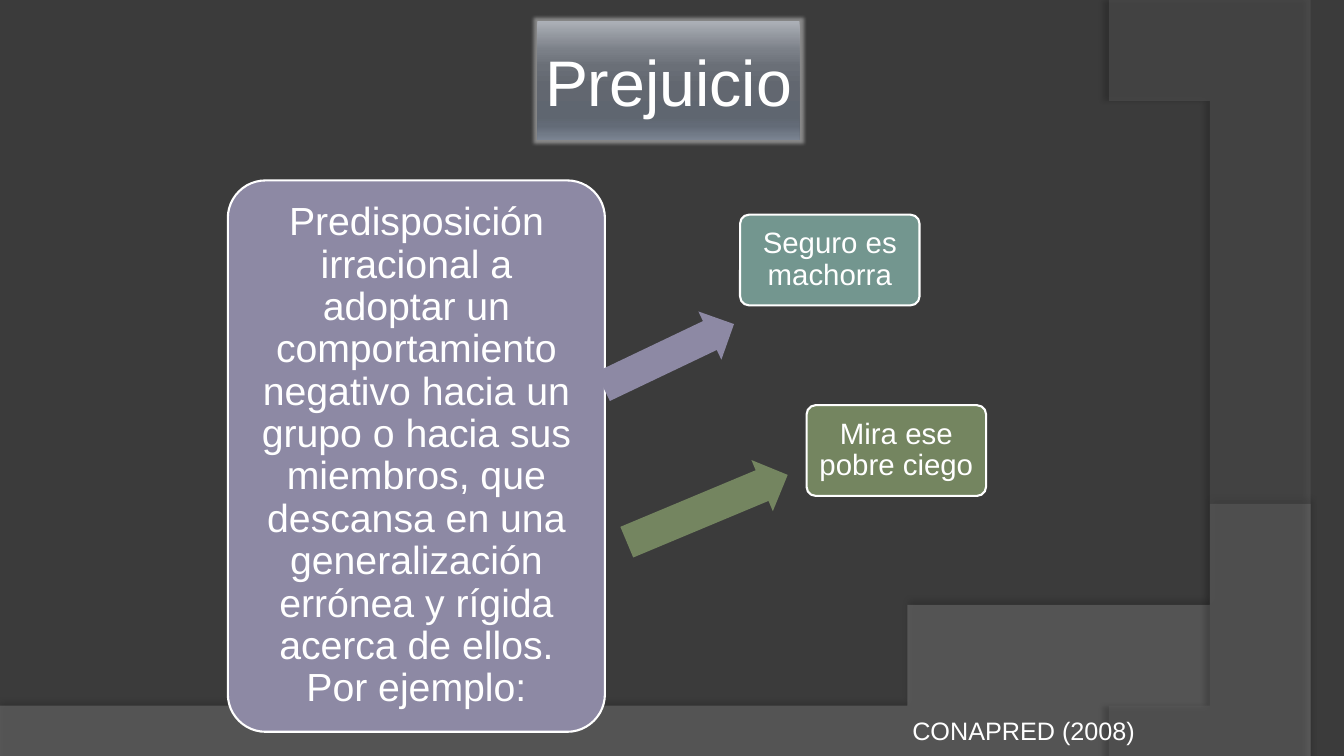
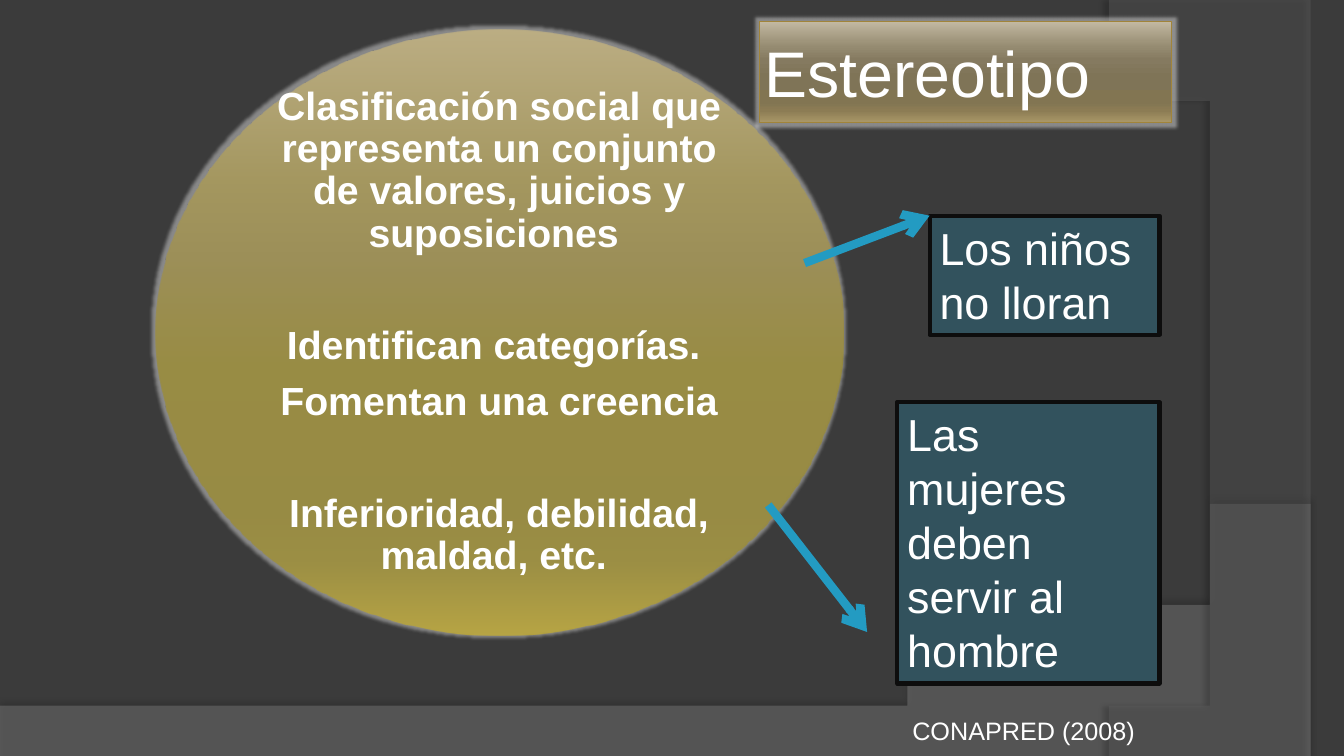
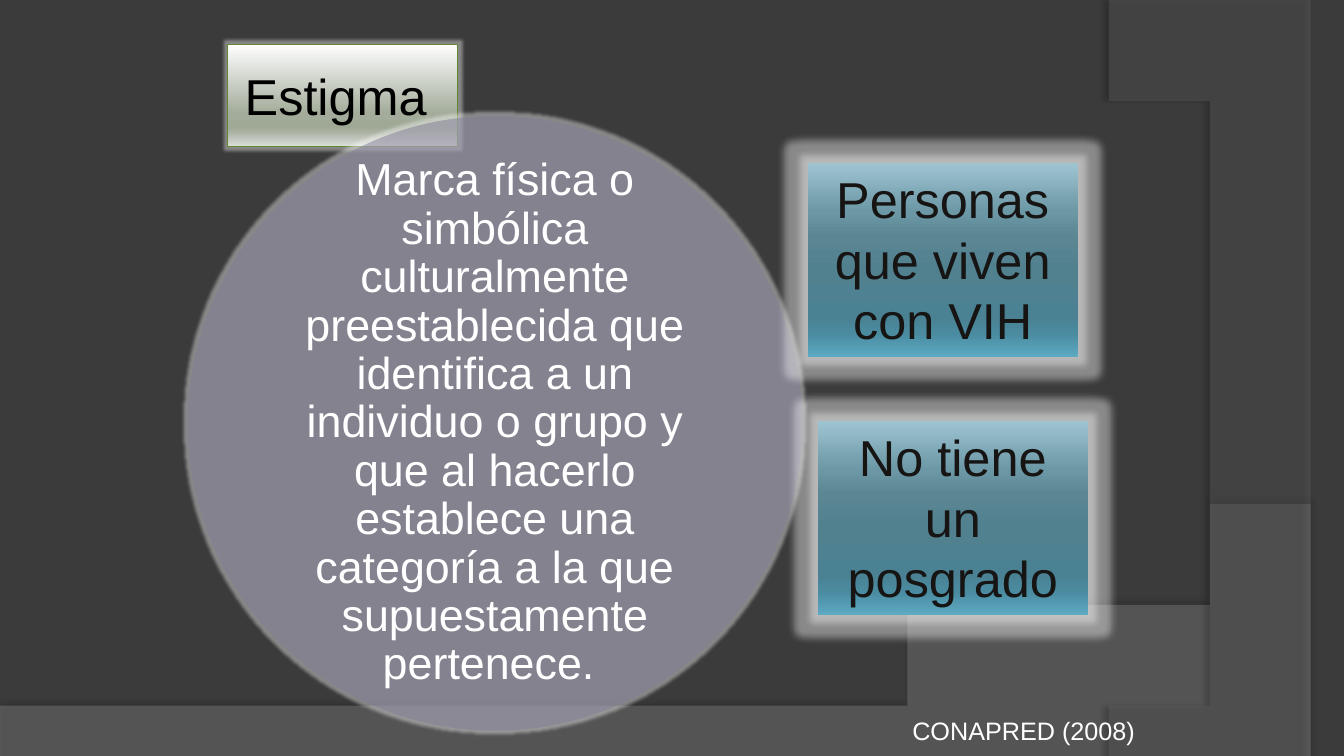
import pptx
import pptx.util
import pptx.dml.color
import pptx.enum.shapes
import pptx.enum.text
import pptx.oxml
import pptx.oxml.ns

Inches, Pt = pptx.util.Inches, pptx.util.Pt
RGB = pptx.dml.color.RGBColor
SHAPE = pptx.enum.shapes.MSO_SHAPE
ALIGN = pptx.enum.text.PP_ALIGN
ANCHOR = pptx.enum.text.MSO_ANCHOR
qn = pptx.oxml.ns.qn

# Shared look
FONT = "Arial"
BACK = RGB(0x3B, 0x3B, 0x3B)
WAVE = RGB(0x7F, 0x7F, 0x7F)
ARC = RGB(0x5E, 0x5E, 0x5E)
WHITE = RGB(0xFF, 0xFF, 0xFF)
BLACK = RGB(0, 0, 0)
INK = RGB(0x16, 0x15, 0x14)
EDGE = RGB(0x0D, 0x0D, 0x0D)
MAUVE = RGB(0x8D, 0x89, 0xA4)
PLUM = RGB(0x80, 0x7C, 0x95)
TEAL = RGB(0x73, 0x96, 0x8F)
OLIVE = RGB(0x74, 0x85, 0x60)
PETROL = RGB(0x32, 0x52, 0x5D)
SKY = RGB(0x23, 0x9B, 0xC2)
BRONZE = RGB(0xA1, 0x84, 0x3A)
LEAF = RGB(0x5F, 0x88, 0x2F)


def ramp(stops, colors):
    """Pair gradient positions with colours."""
    return [(pos, RGB.from_string(c)) for pos, c in zip(stops, colors.split())]


STOPS = (0, 25, 38, 55, 80, 88, 100)
STEEL = ramp(STOPS, "ACB0B7 7A7F87 6A6F77 626770 5F6670 636B77 7B8492")
SAND = ramp(STOPS, "C4BAA3 958B71 857A60 7F7457 827552 8C7C54 AA9868")
GOLD = ramp(STOPS, "EED27E BFA536 AF9527 A88F00 A68D00 AF9500 E6C100")
WATER = ramp(STOPS, "9EC4D2 6C97A5 5B8694 51808F 4A8294 4A8BA0 5DAAC2")
PEARL = ramp((0, 68, 81, 86, 100), "FEFEFE A3AC9A 9FA996 A9B1A1 DBDED9")


def fade(node, alpha):
    """Set the opacity, in percent, of every colour below a node."""
    for color in node.iter(qn("a:srgbClr")):
        pptx.oxml.ns  # namespace module used by qn
        child = color.makeelement(qn("a:alpha"), {"val": str(alpha * 1000)})
        color.append(child)


def effect(shape, tag, color, alpha, **attrs):
    """Add a glow or a shadow to a shape."""
    shape.shadow.inherit = False
    effects = shape._element.spPr.find(qn("a:effectLst"))
    node = effects.makeelement(qn(tag), {k: str(v) for k, v in attrs.items()})
    node.append(node.makeelement(qn("a:srgbClr"), {"val": str(color)}))
    effects.append(node)
    fade(node, alpha)


def paint(shape, fill, line=None, width=0.75, alpha=None, glow=0):
    """Fill with a colour or a ramp; add outline, opacity and glow in points."""
    shape.shadow.inherit = False
    if isinstance(fill, list):
        shape.fill.gradient()
        shape.fill.gradient_angle = 270
        stops = shape._element.spPr.find(".//" + qn("a:gsLst"))
        for old in list(stops):
            stops.remove(old)
        for pos, color in fill:
            stop = stops.makeelement(qn("a:gs"), {"pos": str(pos * 1000)})
            stop.append(stop.makeelement(qn("a:srgbClr"), {"val": str(color)}))
            stops.append(stop)
    else:
        shape.fill.solid()
        shape.fill.fore_color.rgb = fill
    if alpha:
        fade(shape._element.spPr, alpha)
    if line is None:
        shape.line.fill.background()
    else:
        shape.line.color.rgb = line
        shape.line.width = Pt(width)
    if glow:
        effect(shape, "a:glow", WHITE, 40, rad=Pt(glow))


def write(shape, *texts, size=18, color=WHITE, bold=False, align=ALIGN.CENTER,
          anchor=ANCHOR.MIDDLE, inset=(0.1, 0.05), tight=False, gaps=()):
    """Write paragraphs; gaps gives the space before each in points."""
    frame = shape.text_frame
    frame.word_wrap = True
    frame.auto_size = pptx.enum.text.MSO_AUTO_SIZE.NONE
    frame.vertical_anchor = anchor
    frame.margin_left = frame.margin_right = Inches(inset[0])
    frame.margin_top = frame.margin_bottom = Inches(inset[1])
    for i, text in enumerate(texts):
        para = frame.paragraphs[0] if i == 0 else frame.add_paragraph()
        para.alignment = align
        if tight:
            para.line_spacing = 0.9
            para.space_after = Pt(round(size * 0.35, 1))
        if gaps:
            para.space_before = Pt(gaps[i])
        run = para.add_run()
        run.text = text
        run.font.name, run.font.size = FONT, Pt(size)
        run.font.bold, run.font.color.rgb = bold, color


def place(slide, kind, box, fill, **look):
    """Add a painted preset shape in a box of inches."""
    shape = slide.shapes.add_shape(kind, *map(Inches, box))
    paint(shape, fill, **look)
    return shape


def card(slide, box, text, fill, size, inset):
    """Rounded card with a white rim."""
    shape = place(slide, SHAPE.ROUNDED_RECTANGLE, box, fill,
                  line=WHITE, width=1.5)
    shape.adjustments[0] = 0.1
    write(shape, text, size=size, inset=(inset, inset), tight=True)


def block(slide, box, angle, fill):
    """Turned block arrow."""
    shape = place(slide, SHAPE.RIGHT_ARROW, box, fill)
    shape.adjustments[0], shape.adjustments[1] = 0.6, 0.5
    shape.rotation = angle


def arrow(slide, start, end):
    """Thick straight arrow."""
    link = slide.shapes.add_connector(
        pptx.enum.shapes.MSO_CONNECTOR.STRAIGHT, *map(Inches, start + end))
    link.line.color.rgb = SKY
    link.line.width = Pt(6)
    props = link._element.spPr
    line = props.find(qn("a:ln"))
    line.append(line.makeelement(qn("a:tailEnd"), {"type": "arrow"}))
    props.append(props.makeelement(qn("a:effectLst"), {}))


def curve(a, b, c, d, steps=40):
    """Points on a cubic curve from a to d."""
    for i in range(1, steps + 1):
        t = i / steps
        s = 1 - t
        yield tuple(s**3 * p + 3 * s * s * t * q + 3 * s * t * t * r + t**3 * u
                    for p, q, r, u in zip(a, b, c, d))


def band(slide, master, order, points, fill, alpha, dim, angle, blur, dist):
    """Draw an outline and move it to the master."""
    pen = slide.shapes.build_freeform(*points[0], scale=Inches(1))
    pen.add_line_segments(points[1:], close=True)
    shape = pen.convert_to_shape()
    paint(shape, fill, alpha=alpha)
    effect(shape, "a:outerShdw", BLACK, dim, blurRad=Pt(blur), dist=Pt(dist),
           dir=angle * 60000, algn="ctr", rotWithShape=0)
    shape._element.nvSpPr.cNvPr.set("id", str(100 + order))
    master.shapes._spTree.insert(2 + order, shape._element)


def backdrop(deck, slide):
    """Background and the two curved bands of every slide."""
    master = deck.slide_master
    master.background.fill.solid()
    master.background.fill.fore_color.rgb = BACK
    wave = [(0, 7.05), (0, 7.5), (13.33, 7.5), (13.33, 5.2)]
    wave += curve(wave[-1], (7.45, 7.29), (5.21, 7.19), wave[0])
    arc = [(13.33, 0.02), (13.33, 7.5), (10.95, 7.5)]
    arc += curve(arc[-1], (12.46, 6.19), (13.57, 3), (10.67, 0))
    band(slide, master, 0, wave, WAVE, 45, 35, 270, 4, 3.5)
    band(slide, master, 1, arc, ARC, 40, 45, 180, 4, 4)


def start(deck, title, box, fill, line=None, size=46, color=WHITE,
          align=ALIGN.CENTER):
    """New slide with its title plate and source credit."""
    slide = deck.slides.add_slide(deck.slide_layouts[5])
    plate = slide.shapes.title
    plate.left, plate.top, plate.width, plate.height = map(Inches, box)
    paint(plate, fill, line=line, glow=5)
    write(plate, title, size=size, color=color, align=align,
          inset=(0.05, 0.05))
    credit = slide.shapes.add_textbox(*map(Inches, (8.95, 7.05, 2.68, 0.4)))
    write(credit, "CONAPRED (2008)", align=ALIGN.LEFT, anchor=ANCHOR.TOP)
    return slide


def bias(deck):
    slide = start(deck, "Prejuicio", (5.33, 0.21, 2.6, 1.18), STEEL)
    backdrop(deck, slide)
    card(slide, (2.26, 1.79, 3.74, 5.47),
         "Predisposición irracional a adoptar un comportamiento negativo "
         "hacia un grupo o hacia sus miembros, que descansa en una "
         "generalización errónea y rígida acerca de ellos. Por ejemplo:",
         MAUVE, 28, 0.12)
    block(slide, (5.91, 3.26, 1.44, 0.53), 334.5, MAUVE)
    block(slide, (6.15, 4.77, 1.73, 0.55), 337.3, OLIVE)
    card(slide, (7.34, 2.13, 1.78, 0.9), "Seguro es machorra", TEAL, 21, 0.09)
    card(slide, (8, 4.02, 1.78, 0.9), "Mira ese pobre ciego", OLIVE, 21, 0.09)


def trope(deck):
    slide = start(deck, "Estereotipo", (7.53, 0.21, 4.09, 1.01), SAND,
                  line=BRONZE, align=ALIGN.LEFT)
    disc = place(slide, SHAPE.OVAL, (1.54, 0.29, 6.82, 6.01), GOLD,
                 alpha=50, glow=5)
    write(disc, "Clasificación social que representa un conjunto de valores, "
          "juicios y suposiciones ", "Identifican categorías. ",
          "Fomentan una creencia", "Inferioridad, debilidad, maldad, etc. ",
          size=28, bold=True, inset=(0, 0), tight=True, gaps=(0, 40, 0, 40))
    # Examples and their arrows
    for box, text, tail, tip in (
            ((8.9, 3.99, 2.6, 2.79), "Las mujeres deben servir al hombre",
             (7.62, 5.01), (8.6, 6.27)),
            ((9.22, 2.14, 2.28, 1.18), "Los niños no lloran",
             (7.98, 2.61), (9.22, 2.14))):
        note = place(slide, SHAPE.RECTANGLE, box, PETROL, line=EDGE, width=3)
        write(note, text, size=32, align=ALIGN.LEFT, anchor=ANCHOR.TOP)
        arrow(slide, tail, tip)


def stigma(deck):
    slide = start(deck, "Estigma ", (2.26, 0.44, 2.28, 1.01), PEARL,
                  line=LEAF, size=36, color=BLACK)
    disc = place(slide, SHAPE.OVAL, (1.86, 1.15, 6.1, 6.1), PLUM,
                 alpha=50, glow=5)
    write(disc, "Marca física o simbólica culturalmente preestablecida que "
          "identifica a un individuo o grupo y que al hacerlo establece una "
          "categoría a la que supuestamente pertenece. ",
          size=32, inset=(0, 0), tight=True)
    for left, top, text in ((8.01, 1.62, "Personas que viven con VIH"),
                            (8.11, 4.18, "No tiene un posgrado")):
        note = place(slide, SHAPE.RECTANGLE, (left, top, 2.68, 1.92), WATER,
                     glow=11)
        write(note, text, size=36, color=INK, anchor=ANCHOR.TOP)


def main():
    deck = pptx.Presentation()
    deck.slide_width, deck.slide_height = Inches(13.33), Inches(7.5)
    for build in (bias, trope, stigma):
        build(deck)
    deck.save("out.pptx")


if __name__ == "__main__":
    main()
